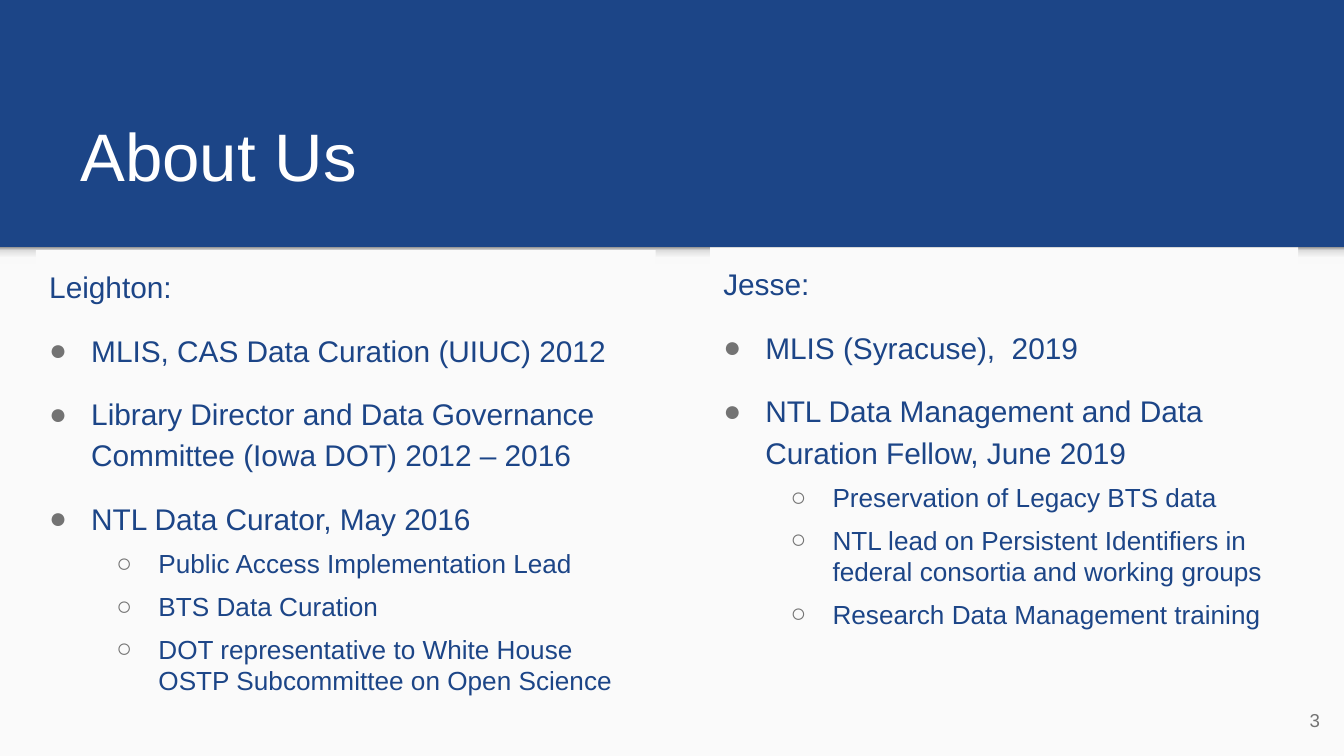
from lxml import etree
from pptx import Presentation
from pptx.dml.color import RGBColor
from pptx.enum.shapes import MSO_SHAPE
from pptx.enum.text import MSO_ANCHOR, PP_ALIGN
from pptx.oxml import parse_xml
from pptx.oxml.ns import qn
from pptx.util import Pt

COLORS = {"blue": "1C4587", "pale": "FAFAFA", "white": "FFFFFF", "gray": "737373"}
STOPS = [(0, "F9F9F9"), (36, "F9F9F9"), (80, "DEDEDE"), (100, "999999")]
NS = "http://schemas.openxmlformats.org/drawingml/2006/main"


def add_box(left, top, width, height, anchor=MSO_ANCHOR.TOP):
    box = slide.shapes.add_textbox(Pt(left), Pt(top), Pt(width), Pt(height))
    frame = box.text_frame
    frame.word_wrap = True
    frame.vertical_anchor = anchor
    frame.margin_left = frame.margin_right = Pt(7.2)
    frame.margin_top = frame.margin_bottom = Pt(7.2)
    return box


def style(par, text, size, color):
    par.text = text
    par.font.name = "Arial"
    par.font.size = Pt(size)
    par.font.color.rgb = RGBColor.from_string(COLORS[color])


prs = Presentation()
prs.slide_width, prs.slide_height = Pt(720), Pt(405)
slide = prs.slides.add_slide(prs.slide_layouts[6])
back = slide.background.fill
back.solid()
back.fore_color.rgb = RGBColor.from_string(COLORS["blue"])

# Pale lower panel, with a soft shade along its top edge
for height in (272.5, 9):
    panel = slide.shapes.add_shape(
        MSO_SHAPE.RECTANGLE, 0, Pt(132.5), Pt(720), Pt(height))
    panel.shadow.inherit = False
    panel.line.fill.background()
    panel.fill.solid()
    panel.fill.fore_color.rgb = RGBColor.from_string(COLORS["pale"])
stops = "".join(f'<a:gs pos="{pos * 1000}"><a:srgbClr val="{tint}"/></a:gs>'
                for pos, tint in STOPS)
solid = panel._element.spPr.find(qn("a:solidFill"))
solid.getparent().replace(solid, parse_xml(
    f'<a:gradFill xmlns:a="{NS}"><a:gsLst>{stops}</a:gsLst>'
    '<a:lin ang="16200000" scaled="0"/></a:gradFill>'))

title = add_box(36, 51, 647, 60.5, MSO_ANCHOR.BOTTOM)
style(title.text_frame.paragraphs[0], "About Us", 36, "white")

# Each column: left, top, width, height, heading, then (level, text) items
columns = [
    (19.3, 134, 332, 237.5, "Leighton:", [
        (0, "MLIS, CAS Data Curation (UIUC) 2012"),
        (0, "Library Director and Data Governance Committee (Iowa DOT) 2012 – 2016"),
        (0, "NTL Data Curator, May 2016"),
        (1, "Public Access Implementation Lead"),
        (1, "BTS Data Curation"),
        (1, "DOT representative to White House OSTP Subcommittee on Open Science"),
    ]),
    (380.4, 132.5, 315, 237.5, "Jesse:", [
        (0, "MLIS (Syracuse),  2019"),
        (0, "NTL Data Management and Data Curation Fellow, June 2019"),
        (1, "Preservation of Legacy BTS data"),
        (1, "NTL lead on Persistent Identifiers in federal consortia and working groups"),
        (1, "Research Data Management training"),
    ]),
]
for left, top, width, height, head, items in columns:
    box = add_box(left, top, width, height)
    box.fill.solid()
    box.fill.fore_color.rgb = RGBColor.from_string(COLORS["pale"])
    frame = box.text_frame
    par = frame.paragraphs[0]
    par.line_spacing, par.space_after = 1.15, Pt(12)
    style(par, head, 16, "blue")
    for i, (level, text) in enumerate(items):
        par = frame.add_paragraph()
        par.level = level
        if level:
            par.space_before = Pt(6)
        else:
            par.line_spacing = 1.15
            par.space_after = Pt(0 if items[i + 1][0] else 12)
        props = par._p.get_or_add_pPr()
        props.set("marL", str(Pt(22.5 + 36 * level)))
        props.set("indent", str(-Pt(22.5)))
        tint = etree.SubElement(props, qn("a:buClr"))
        etree.SubElement(tint, qn("a:srgbClr"), val=COLORS["gray"])
        etree.SubElement(props, qn("a:buFont"), typeface="Arial")
        etree.SubElement(props, qn("a:buChar"), char="●○"[level])
        style(par, text, 16 - 2 * level, "blue")

number = add_box(671, 370, 43.2, 31, MSO_ANCHOR.MIDDLE)
par = number.text_frame.paragraphs[0]
par.alignment = PP_ALIGN.RIGHT
style(par, "3", 10, "gray")

prs.save("out.pptx")
